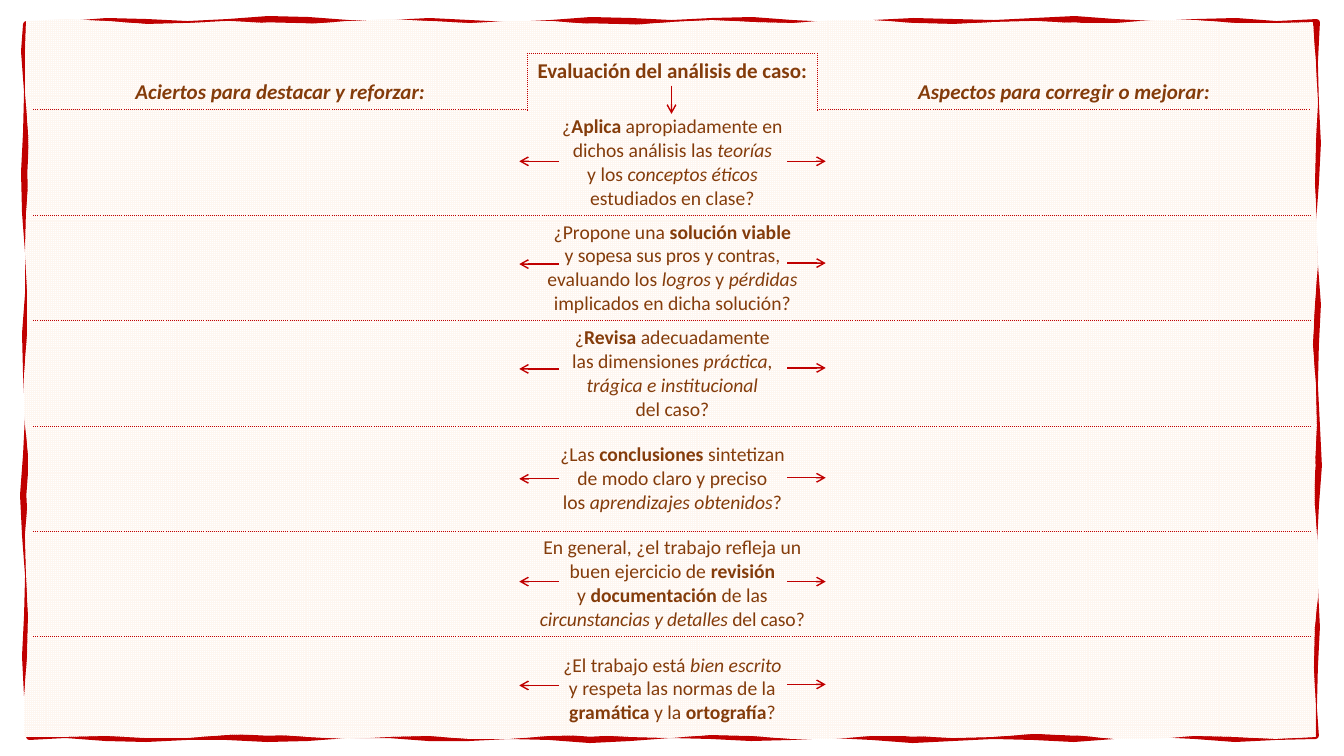
from math import sin
from lxml import etree
from pptx import Presentation
from pptx import util as u
from pptx.dml import color as dml
from pptx.enum import dml as patterns, shapes, text
from pptx.oxml import ns

PX = 9144
FONT = "Calibri"
COLORS = {"red": "C00000", "brown": "843C0B", "cream": "FEF6F0", "white": "FFFFFF"}

HEADERS = {
    0: [("Aciertos para destacar y reforzar:", "bi")],
    1: [("Evaluación del análisis de caso:", "b")],
    3: [("Aspectos para corregir o mejorar:", "bi")],
}
QUESTIONS = [
    [("¿", ""), ("Aplica", "b"), (" apropiadamente en dichos análisis las ", ""),
     ("teorías\n", "i"), ("y los ", ""), ("conceptos éticos\n", "i"),
     ("estudiados en clase?", "")],
    [("¿Propone una ", ""), ("solución viable\n", "b"),
     ("y sopesa sus pros y contras", "t"), (", evaluando los ", ""),
     ("logros", "i"), (" y ", ""), ("pérdidas", "i"),
     (" implicados en dicha solución?", "")],
    [("¿", ""), ("Revisa", "b"), (" adecuadamente\nlas dimensiones ", ""),
     ("práctica,\ntrágica e institucional\n", "i"), ("del caso?", "")],
    [("¿Las ", ""), ("conclusiones", "b"),
     (" sintetizan\nde modo claro y preciso\nlos ", ""),
     ("aprendizajes obtenidos", "i"), ("?", "")],
    [("En general, ¿el trabajo refleja un\nbuen ejercicio de ", ""),
     ("revisión\n", "b"), ("y ", ""), ("documentación ", "b"), ("de las ", ""),
     ("circunstancias y detalles ", "it"), ("del caso", "t"), ("?", "")],
    [("¿El trabajo está ", ""), ("bien escrito\n", "i"),
     ("y respeta las normas de la ", ""), ("gramática", "b"), (" y la ", ""),
     ("ortografía", "b"), ("?", "")],
]

FRAME = (26, 22, 1305, 731)
WAVE_STEP = 40
GRID_LEFT, GRID_TOP = 33, 29
COLUMNS = [490, 116, 172, 347, 142]
ROWS = [24, 56] + [104] * len(QUESTIONS)
CENTRE = (1, 2)
LEFT_ARROW, RIGHT_ARROW = (554, 515), (781, 819)
ARROW_HEIGHTS = [(160, 160), (262, 261), (366, 365), (475, 474), (577, 577), (680, 679)]
HEADER_ARROW = (666, 85, 666, 113)


def rgb(name):
    return dml.RGBColor.from_string(COLORS[name])


def wavy_outline(slide, phase):
    left, top, right, bottom = FRAME

    def wave(t):
        return 2 * sin(t / 25 + phase) + sin(t / 60 + 2 * phase)

    across = range(left, right, WAVE_STEP)
    down = range(top, bottom, WAVE_STEP)
    points = [(x, top + wave(x)) for x in across]
    points += [(right + wave(y + 50), y) for y in down]
    points += [(right + left - x, bottom + wave(x + 90)) for x in across]
    points += [(left + wave(y + 20), bottom + top - y) for y in down]
    builder = slide.shapes.build_freeform(*points[0], scale=PX)
    builder.add_line_segments(points[1:], close=True)
    outline = builder.convert_to_shape()
    outline.shadow.inherit = False
    return outline


def add_frame(slide):
    stroke = wavy_outline(slide, 0)
    stroke.fill.background()
    stroke.line.color.rgb = rgb("red")
    stroke.line.width = u.Pt(4.5)
    paper = wavy_outline(slide, 2)
    paper.line.fill.background()
    paper.fill.patterned()
    paper.fill.pattern = patterns.MSO_PATTERN.SMALL_GRID
    paper.fill.fore_color.rgb = rgb("cream")
    paper.fill.back_color.rgb = rgb("white")


def write(cell, pieces, size, anchor):
    cell.vertical_anchor = anchor
    para = cell.text_frame.paragraphs[0]
    para.alignment = text.PP_ALIGN.CENTER
    for words, style in pieces:
        for i, part in enumerate(words.split("\n")):
            if i:
                para.add_line_break()
            if not part:
                continue
            run = para.add_run()
            run.text = part
            font = run.font
            font.name, font.size = FONT, u.Pt(size)
            font.bold, font.italic = "b" in style, "i" in style
            font.color.rgb = rgb("brown")
            if "t" in style:
                run._r.get_or_add_rPr().set("spc", "-10")
    for gap in para._p.findall(ns.qn("a:br")):
        etree.SubElement(gap, ns.qn("a:rPr"), sz=str(size * 100))


def ruled_above(row, col):
    if col in CENTRE and row <= 2:
        return row == 1
    return 2 <= row < len(ROWS)


def set_borders(cell, row, col):
    ruled = {
        "L": row == 1 and col in (1, 3),
        "R": row == 1 and col in (0, 2),
        "T": ruled_above(row, col),
        "B": ruled_above(row + 1, col),
    }
    if row == 1 and col == 1:
        ruled["R"] = True
    props = cell._tc.get_or_add_tcPr()
    for side, shown in ruled.items():
        line = etree.SubElement(props, ns.qn("a:ln" + side), w="12700")
        if shown:
            fill = etree.SubElement(line, ns.qn("a:solidFill"))
            etree.SubElement(fill, ns.qn("a:srgbClr"), val=COLORS["red"])
            etree.SubElement(line, ns.qn("a:prstDash"), val="sysDot")
        else:
            etree.SubElement(line, ns.qn("a:noFill"))
    cell.fill.background()


def add_grid(slide):
    box = (GRID_LEFT, GRID_TOP, sum(COLUMNS), sum(ROWS))
    grid = slide.shapes.add_table(len(ROWS), len(COLUMNS), *(n * PX for n in box)).table
    grid.first_row = grid.horz_banding = False
    for column, width in zip(grid.columns, COLUMNS):
        column.width = width * PX
    for r, height in enumerate(ROWS):
        grid.rows[r].height = height * PX
        for c in range(len(COLUMNS)):
            cell = grid.cell(r, c)
            set_borders(cell, r, c)
            etree.SubElement(cell.text_frame.paragraphs[0]._p, ns.qn("a:endParaRPr"), sz="800")
        for c in (0, 2) if r == 0 else (1, 3):
            grid.cell(r, c).merge(grid.cell(r, c + 1))
    for c, pieces in HEADERS.items():
        anchor = text.MSO_ANCHOR.TOP if c in CENTRE else text.MSO_ANCHOR.BOTTOM
        write(grid.cell(1, c), pieces, 15, anchor)
    for r, pieces in enumerate(QUESTIONS, 2):
        anchor = text.MSO_ANCHOR.BOTTOM if r == 2 else text.MSO_ANCHOR.MIDDLE
        write(grid.cell(r, 1), pieces, 14, anchor)


def add_arrow(slide, *ends):
    arrow = slide.shapes.add_connector(
        shapes.MSO_CONNECTOR.STRAIGHT, *(n * PX for n in ends))
    arrow.line.color.rgb = rgb("red")
    arrow.line.width = u.Pt(1)
    etree.SubElement(arrow.line._get_or_add_ln(), ns.qn("a:tailEnd"), type="arrow")
    etree.SubElement(arrow._element.spPr, ns.qn("a:effectLst"))


def main():
    deck = Presentation()
    deck.slide_width, deck.slide_height = 1333 * PX, 750 * PX
    slide = deck.slides.add_slide(deck.slide_layouts[6])
    add_frame(slide)
    add_grid(slide)
    add_arrow(slide, *HEADER_ARROW)
    for heights in ARROW_HEIGHTS:
        for (start, end), y in zip((LEFT_ARROW, RIGHT_ARROW), heights):
            add_arrow(slide, start, y, end, y)
    deck.save("out.pptx")


if __name__ == "__main__":
    main()
